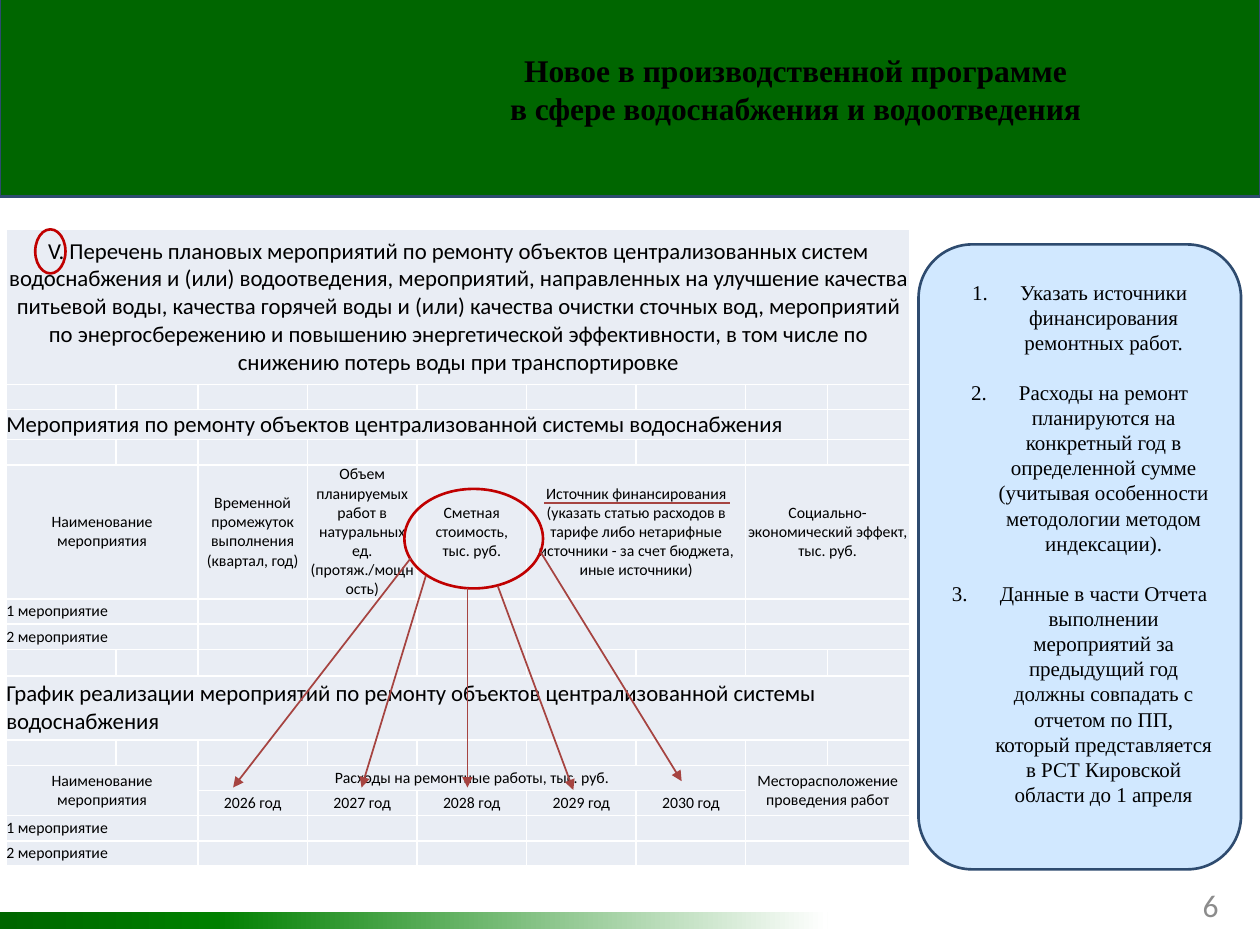
from copy import deepcopy

from lxml.etree import SubElement
from pptx import Presentation
from pptx.dml.color import RGBColor
from pptx.enum.shapes import MSO_CONNECTOR as Connector, MSO_SHAPE as Shape
from pptx.enum.text import MSO_ANCHOR as Anchor, PP_ALIGN as Align
from pptx.oxml.ns import qn
from pptx.util import Inches, Pt

COLUMNS = [0.87, 0.65, 0.87, 0.87, 0.87, 0.87, 0.87, 0.65, 0.65]
ROWS = [1.23, 0.2, 0.24, 0.2, 1, 0.2, 0.2, 0.21, 0.51] + [0.2] * 5
MEASURES = ["1 мероприятие", "2 мероприятие"]
SECTIONS = [
    (0, 9, "V. Перечень плановых мероприятий по ремонту объектов централизованных систем "
     "водоснабжения и (или) водоотведения, мероприятий, направленных на улучшение качества "
     "питьевой воды, качества горячей воды и (или) качества очистки сточных вод, мероприятий "
     "по энергосбережению и повышению энергетической эффективности, в том числе по снижению "
     "потерь воды при транспортировке", Align.CENTER),
    (2, 8, "Мероприятия по ремонту объектов централизованной системы водоснабжения", Align.LEFT),
    (8, 9, "График реализации мероприятий по ремонту объектов централизованной системы "
     "водоснабжения", Align.LEFT),
]
HEADERS = [
    (4, 0, 1, 2, "Наименование мероприятия"),
    (4, 2, 1, 1, "Временной промежуток выполнения (квартал, год)"),
    (4, 3, 1, 1, "Объем планируемых работ в натуральных ед. (протяж./мощность)"),
    (4, 4, 1, 1, "Сметная стоимость,\vтыс. руб."),
    (4, 5, 1, 2, "Источник финансирования (указать статью расходов в тарифе либо нетарифные "
     "источники - за счет бюджета, иные источники)"),
    (4, 7, 1, 2, "Социально-экономический эффект, тыс. руб."),
    (10, 0, 2, 2, "Наименование мероприятия"),
    (10, 2, 1, 5, "Расходы на ремонтные работы, тыс. руб."),
    (10, 7, 2, 2, "Месторасположение проведения работ"),
]
NOTES = [
    "Указать источники финансирования ремонтных работ.",
    "Расходы на ремонт планируются на конкретный год в определенной сумме (учитывая "
    "особенности методологии методом индексации).",
    "Данные в части Отчета выполнении мероприятий за предыдущий год должны совпадать с отчетом "
    "по ПП, который представляется в РСТ Кировской области до 1 апреля",
]
ARROWS = [
    (4.29, 4.38, 5.41, 6.2),
    (3.95, 4.65, 4.55, 6.27),
    (3.38, 4.57, 2.87, 6.25),
    (3.71, 4.67, 3.71, 6.25),
    (3.26, 4.43, 1.85, 6.25),
]


def color(value):
    return RGBColor.from_string(value)


def write(frame, *texts, size, font="Calibri", ink="000000", bold=False,
          align=Align.LEFT, gap=0, numbered=False):
    frame.word_wrap = True
    frame.vertical_anchor = Anchor.MIDDLE
    for index, text in enumerate(texts):
        para = frame.paragraphs[0] if index == 0 else frame.add_paragraph()
        para.text = text
        para.alignment = align
        if numbered:
            properties = para._p.get_or_add_pPr()
            properties.set("marL", str(Inches(0.38)))
            properties.set("indent", str(Inches(-0.38)))
            SubElement(properties, qn("a:buAutoNum"), type="arabicPeriod")
        para.space_before = Pt(gap if index else 0)
        for span in para.runs:
            span.font.name = font
            span.font.size = Pt(size)
            span.font.bold = bold
            span.font.color.rgb = color(ink)
        if not text:
            SubElement(para._p, qn("a:endParaRPr"), sz=str(size * 100))


class Board:
    serif = "Times New Roman"
    green = "006600"
    navy = "2E4B6F"
    red = "C00000"
    brick = "A64441"
    sky = "D1E8FF"
    cell_fill = "E9EDF4"
    white = "FFFFFF"

    def __init__(self, page):
        self.page = page

    def shape(self, kind, left, top, width, height, fill=None, line=None):
        box = self.page.shapes.add_shape(
            kind, Inches(left), Inches(top), Inches(width), Inches(height))
        box.shadow.inherit = False
        if fill:
            box.fill.solid()
            box.fill.fore_color.rgb = color(fill)
        else:
            box.fill.background()
        if line:
            box.line.color.rgb = color(line)
            box.line.width = Pt(1.5)
        else:
            box.line.fill.background()
        return box

    def gradient(self, left, top, width, height, stops):
        box = self.shape(Shape.RECTANGLE, left, top, width, height)
        box.fill.gradient()
        box.fill.gradient_angle = 0
        stop_list = box._element.spPr.find(".//" + qn("a:gsLst"))
        while len(stop_list) < len(stops):
            stop_list.append(deepcopy(stop_list[0]))
        for stop, (position, value) in zip(box.fill.gradient_stops, stops):
            stop.position = position
            stop.color.rgb = color(value)

    def title(self, left, top, width, height, *lines):
        box = self.page.shapes.title
        box.left, box.top = Inches(left), Inches(top)
        box.width, box.height = Inches(width), Inches(height)
        write(box.text_frame, *lines, size=18, font=self.serif, bold=True, align=Align.CENTER)
        self.page.shapes._spTree.append(box._element)

    def text(self, left, top, width, height, text, **style):
        box = self.page.shapes.add_textbox(
            Inches(left), Inches(top), Inches(width), Inches(height))
        write(box.text_frame, text, **style)

    def line(self, x1, y1, x2, y2, arrow=False):
        connector = self.page.shapes.add_connector(
            Connector.STRAIGHT, Inches(x1), Inches(y1), Inches(x2), Inches(y2))
        connector.line.color.rgb = color(self.brick)
        connector.line.width = Pt(1)
        properties = connector._element.spPr
        if arrow:
            SubElement(properties.find(qn("a:ln")), qn("a:tailEnd"), type="triangle")
        SubElement(properties, qn("a:effectLst"))

    def cell(self, cell):
        cell.margin_left = cell.margin_right = cell.margin_top = cell.margin_bottom = 0
        cell.vertical_anchor = Anchor.MIDDLE
        properties = cell._tc.get_or_add_tcPr()
        for side in ("lnL", "lnR", "lnT", "lnB"):
            border = SubElement(properties, qn(f"a:{side}"), w=str(Pt(1)))
            fill = SubElement(border, qn("a:solidFill"))
            SubElement(fill, qn("a:srgbClr"), val=self.white)
        cell.fill.solid()
        cell.fill.fore_color.rgb = color(self.cell_fill)

    def table(self, left, top, columns, rows, entries):
        table = self.page.shapes.add_table(
            len(rows), len(columns), Inches(left), Inches(top),
            Inches(sum(columns)), Inches(sum(rows))).table
        table.first_row = table.horz_banding = False
        for column, width in zip(table.columns, columns):
            column.width = Inches(width)
        for row, height in zip(table.rows, rows):
            row.height = Inches(height)
        for cell in table.iter_cells():
            self.cell(cell)
        for row, column, height, width, text, size, align in entries:
            cell = table.cell(row, column)
            if height * width > 1:
                cell.merge(table.cell(row + height - 1, column + width - 1))
            if text:
                write(cell.text_frame, text, size=size, align=align)
        for cell in table.iter_cells():
            if not cell.text:
                write(cell.text_frame, "", size=9)


def program_entries():
    entries = [(row, 0, 1, width, text, 13, align) for row, width, text, align in SECTIONS]
    entries += [(*header, 9, Align.CENTER) for header in HEADERS]
    entries += [(11, 2 + index, 1, 1, f"{2026 + index} год", 9, Align.CENTER)
                for index in range(5)]
    for first_row, pairs in ((5, (5, 7)), (12, (7,))):
        for row, measure in enumerate(MEASURES, first_row):
            entries.append((row, 0, 1, 2, measure, 9, Align.LEFT))
            entries += [(row, column, 1, 2, "", 9, Align.LEFT) for column in pairs]
    return entries


def main():
    deck = Presentation()
    deck.slide_width, deck.slide_height = Inches(10), Inches(7.5)
    board = Board(deck.slides.add_slide(deck.slide_layouts[5]))
    board.shape(Shape.RECTANGLE, 0, -0.03, 10, 1.59, board.green, board.navy)
    board.gradient(0, 7.24, 6.57, 0.13, [(0, board.green), (0.26, "008000"), (1, board.white)])
    board.text(9.17, 6.98, 0.6, 0.4, "6", size=18, ink="8C8C8C", align=Align.RIGHT)
    board.title(3.6, 0.35, 5.43, 0.71, "Новое в производственной программе",
                "в сфере водоснабжения и водоотведения")
    notes = board.shape(Shape.ROUNDED_RECTANGLE, 7.29, 1.94, 2.56, 4.96, board.sky, board.navy)
    notes.text_frame.margin_bottom = Inches(0.27)
    write(notes.text_frame, *NOTES, size=12, font=board.serif, align=Align.CENTER,
          gap=14, numbered=True)
    board.table(0.05, 1.82, COLUMNS, ROWS, program_entries())
    board.shape(Shape.OVAL, 0.28, 1.82, 0.24, 0.35, line=board.red)
    board.shape(Shape.OVAL, 3.21, 3.88, 1.1, 0.79, line=board.red)
    for ends in ARROWS:
        board.line(*ends, arrow=True)
    board.line(4.32, 3.99, 5.79, 3.99)
    deck.save("out.pptx")


if __name__ == "__main__":
    main()
